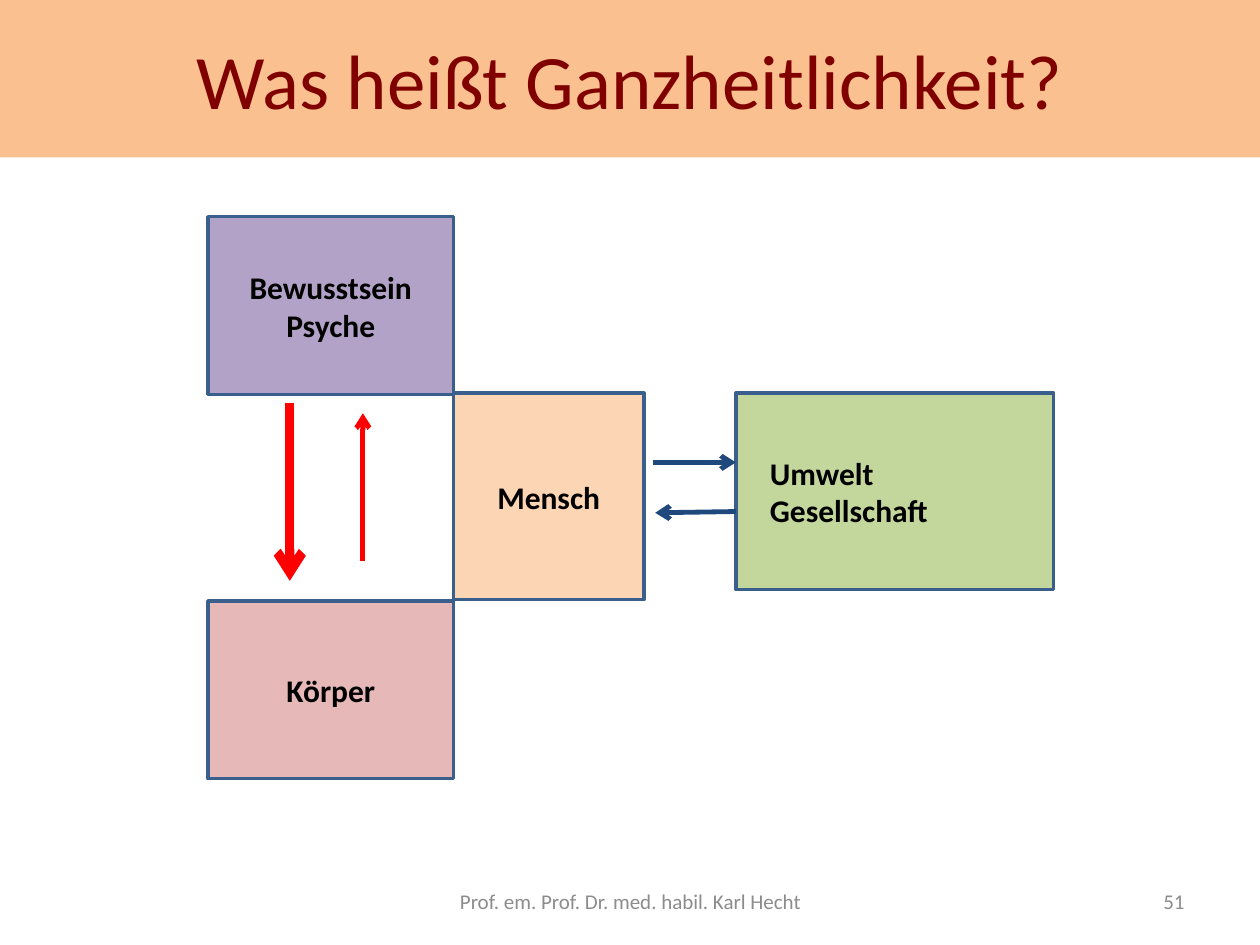
from lxml.etree import SubElement
from pptx import Presentation
from pptx.dml.color import RGBColor
from pptx.enum.shapes import MSO_CONNECTOR as Connector, MSO_SHAPE as Shape
from pptx.enum.text import MSO_ANCHOR as Anchor, PP_ALIGN as Align
from pptx.oxml.ns import qn
from pptx.util import Inches, Pt

BLACK = RGBColor(0x00, 0x00, 0x00)
GREY = RGBColor(0x8C, 0x8C, 0x8C)
MAROON = RGBColor(0x80, 0x00, 0x00)
ORANGE = RGBColor(0xFA, 0xC0, 0x90)
PEACH = RGBColor(0xFC, 0xD5, 0xB5)
GREEN = RGBColor(0xC3, 0xD6, 0x9B)
PURPLE = RGBColor(0xB3, 0xA2, 0xC7)
ROSE = RGBColor(0xE6, 0xB9, 0xB8)
OUTLINE = RGBColor(0x3A, 0x5F, 0x8C)
RED = RGBColor(0xFF, 0x00, 0x00)
NAVY = RGBColor(0x1F, 0x49, 0x7D)


def write(frame, text, size=18, color=BLACK, bold=False, align=Align.CENTER, indent=0.1):
    frame.word_wrap = True
    frame.vertical_anchor = Anchor.MIDDLE
    frame.margin_left = Inches(indent)
    frame.text = text
    for paragraph in frame.paragraphs:
        paragraph.alignment = align
        font = paragraph.font
        font.name, font.size, font.bold = "Calibri", Pt(size), bold
        font.color.rgb = color


class Diagram:
    """Draws styled boxes, labels and arrows on one slide."""

    def __init__(self, slide):
        self.shapes = slide.shapes

    def box(self, text, bounds, fill, outline=OUTLINE, **style):
        box = self.shapes.add_shape(Shape.RECTANGLE, *map(Inches, bounds))
        box.shadow.inherit = False
        box.fill.solid()
        box.fill.fore_color.rgb = fill
        if outline is None:
            box.line.fill.background()
        else:
            box.line.color.rgb = outline
            box.line.width = Pt(2)
        write(box.text_frame, text, **style)

    def label(self, text, bounds, **style):
        label = self.shapes.add_textbox(*map(Inches, bounds))
        write(label.text_frame, text, **style)

    def arrow(self, start, end, color, width=2.75):
        arrow = self.shapes.add_connector(Connector.STRAIGHT, *map(Inches, start + end))
        arrow.line.color.rgb = color
        arrow.line.width = Pt(width)
        SubElement(arrow.line._get_or_add_ln(), qn("a:tailEnd"), type="arrow")
        SubElement(arrow._element.spPr, qn("a:effectLst"))


def main():
    deck = Presentation()
    deck.slide_width, deck.slide_height = Inches(10), Inches(7.5)
    diagram = Diagram(deck.slides.add_slide(deck.slide_layouts[6]))

    diagram.box("Was heißt Ganzheitlichkeit?", (0, 0, 10, 1.25), ORANGE,
                outline=None, size=44, color=MAROON)
    diagram.label("Prof. em. Prof. Dr. med. habil. Karl Hecht", (3.42, 6.95, 3.17, 0.4),
                  size=12, color=GREY)
    diagram.label("51", (7.17, 6.95, 2.33, 0.4), size=12, color=GREY, align=Align.RIGHT)

    diagram.box("Umwelt\nGesellschaft", (5.84, 3.12, 2.52, 1.56), GREEN,
                bold=True, align=Align.LEFT, indent=0.27)
    for text, bounds, fill in (
        ("Bewusstsein\nPsyche", (1.65, 1.72, 1.95, 1.41), PURPLE),
        ("Körper", (1.65, 4.77, 1.95, 1.41), ROSE),
        ("Mensch", (3.6, 3.12, 1.51, 1.64), PEACH),
    ):
        diagram.box(text, bounds, fill, bold=True)

    diagram.arrow((2.3, 3.2), (2.3, 4.61), RED, width=5.25)
    diagram.arrow((2.88, 4.45), (2.88, 3.28), RED)
    diagram.arrow((5.18, 3.67), (5.84, 3.67), NAVY)
    diagram.arrow((5.84, 4.06), (5.2, 4.07), NAVY)

    deck.save("out.pptx")


if __name__ == "__main__":
    main()
